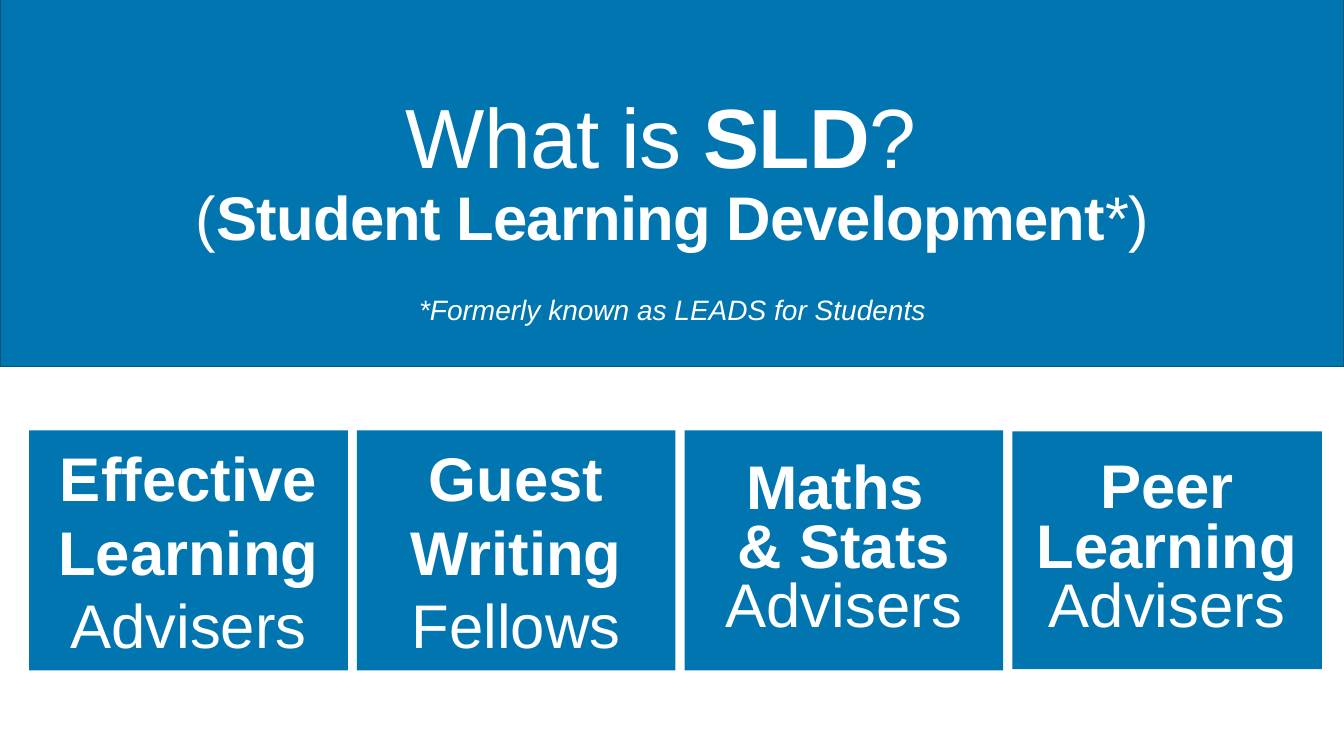
from pptx import Presentation
from pptx import util as u
from pptx.dml.color import RGBColor
from pptx.enum import shapes, text

COLORS = {"blue": "0075B0", "edge": "005782", "white": "FFFFFF"}
WIDTH, HEIGHT = 13.33, 7.5
CARD_PITCH, CARD_GAP = 3.25, 0.09
ADVISERS = [
    (1.0, [[("Effective Learning ", True), ("Advisers", False)]]),
    (1.0, [[("Guest Writing ", True), ("Fellows", False)]]),
    (0.8, [[("Maths ", True)], [("& Stats", True)], [("Advisers", False)]]),
    (0.8, [[("Peer Learning", True)], [("Advisers", False)]]),
]


def color(name):
    """Return the named palette colour."""
    return RGBColor.from_string(COLORS[name])


def place(box):
    """Convert a box in inches to lengths."""
    return [u.Inches(side) for side in box]


def write(paragraph, words, size, bold=False, italic=False):
    """Add one formatted white run to a paragraph."""
    run = paragraph.add_run()
    run.text = words
    run.font.name, run.font.size = "Arial", u.Pt(size)
    run.font.bold, run.font.italic = bold, italic
    run.font.color.rgb = color("white")
    return run


def add_panel(slide, box):
    """Draw a plain blue rectangle."""
    panel = slide.shapes.add_shape(shapes.MSO_SHAPE.RECTANGLE, *place(box))
    panel.shadow.inherit = False
    panel.fill.solid()
    panel.fill.fore_color.rgb = color("blue")
    panel.line.fill.background()
    return panel


def add_heading(slide, box):
    """Fill the title placeholder with the two-line question."""
    heading = slide.shapes.title
    heading.left, heading.top, heading.width, heading.height = place(box)
    frame = heading.text_frame
    frame.word_wrap = True
    frame.auto_size = text.MSO_AUTO_SIZE.NONE
    frame.vertical_anchor = text.MSO_ANCHOR.MIDDLE
    question = frame.paragraphs[0]
    question.alignment = text.PP_ALIGN.CENTER
    question.line_spacing = 0.9
    lines = [
        (60, [("What is ", False), ("SLD", True), ("? ", False)]),
        (44, [("(", False), ("Student Learning Development", True), ("*)", False)]),
    ]
    for row, (size, parts) in enumerate(lines):
        if row:
            question.add_line_break()
        for words, bold in parts:
            run = write(question, words, size, bold)
            run.font._element.set("spc", "-60")


def add_former_name(slide, box):
    """Place the footnote about the former name."""
    former_name = slide.shapes.add_textbox(*place(box))
    frame = former_name.text_frame
    frame.word_wrap = True
    frame.auto_size = text.MSO_AUTO_SIZE.SHAPE_TO_FIT_TEXT
    note = frame.paragraphs[0]
    note.alignment = text.PP_ALIGN.CENTER
    write(note, "*Formerly known as LEADS for Students", 20, italic=True)


def add_banner(slide, box):
    """Build the top banner with its heading and footnote."""
    left, top, width, height = box
    banner = add_panel(slide, box)
    banner.line.color.rgb = color("edge")
    banner.line.width = u.Pt(0.85)
    add_heading(slide, (left + 1.79, top + 1.18, 9.76, 1.45))
    add_former_name(slide, (left + 3.15, top + 3.02, 7.04, 0.44))
    tree = slide.shapes._spTree
    tree.remove(banner._element)
    tree.insert(2, banner._element)


def add_card(slide, box, spacing, paragraphs):
    """Build one card naming a group of advisers."""
    frame = add_panel(slide, box).text_frame
    frame.word_wrap = True
    frame.vertical_anchor = text.MSO_ANCHOR.MIDDLE
    for index, parts in enumerate(paragraphs):
        paragraph = frame.add_paragraph() if index else frame.paragraphs[0]
        paragraph.alignment = text.PP_ALIGN.CENTER
        paragraph.line_spacing = spacing
        for words, bold in parts:
            write(paragraph, words, 44, bold)


def add_cards(slide, box):
    """Set the cards side by side, the last one slightly smaller."""
    left, top, width, height = box
    for column, (spacing, paragraphs) in enumerate(ADVISERS):
        x = left + column * CARD_PITCH
        card_width = min(CARD_PITCH - CARD_GAP, left + width - x)
        trim = 0.01 if column == len(ADVISERS) - 1 else 0
        card = (x, top + trim, card_width, height - 2 * trim)
        add_card(slide, card, spacing, paragraphs)


def main():
    """Build and save the slide."""
    deck = Presentation()
    deck.slide_width, deck.slide_height = u.Inches(WIDTH), u.Inches(HEIGHT)
    slide = deck.slides.add_slide(deck.slide_layouts[5])
    add_banner(slide, (0, -0.17, WIDTH, 3.81))
    add_cards(slide, (0.29, 4.27, 12.82, 2.38))
    deck.save("out.pptx")


if __name__ == "__main__":
    main()
